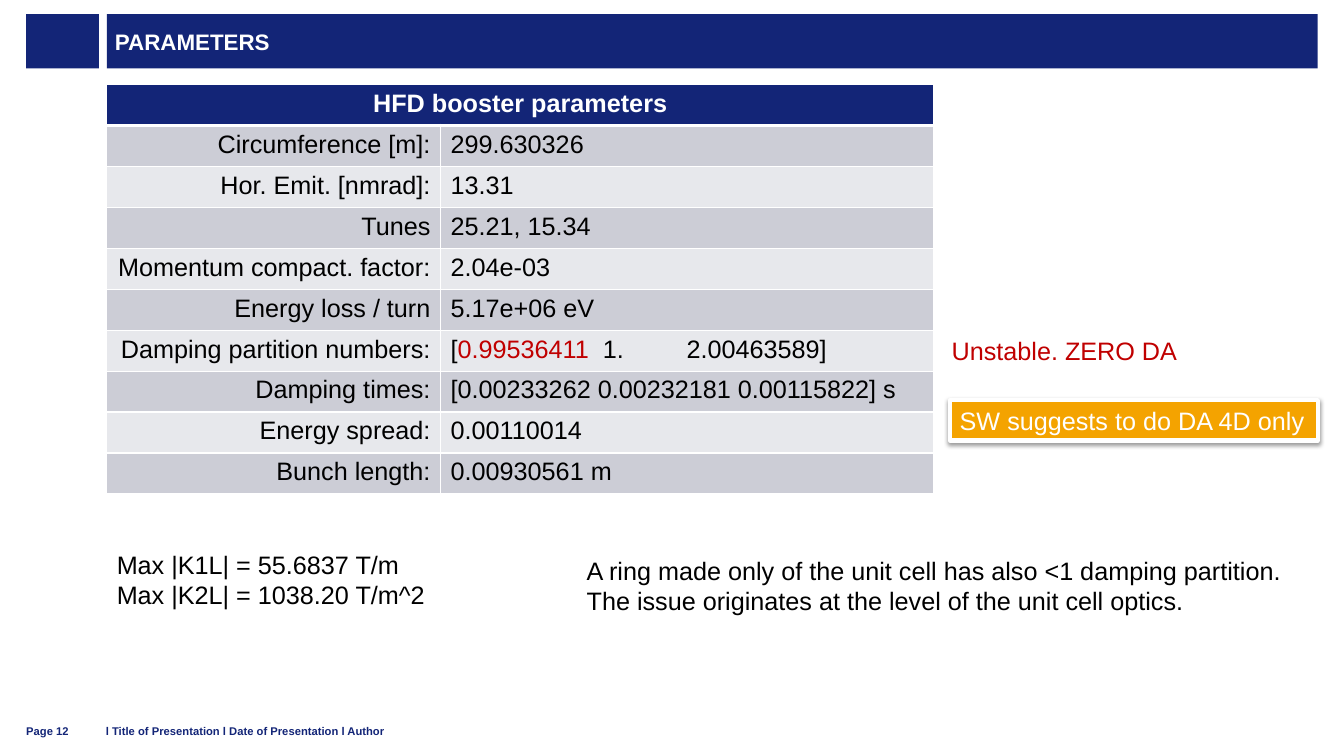
from lxml import etree
from pptx import Presentation
from pptx.dml.color import RGBColor
from pptx.enum.shapes import MSO_SHAPE
from pptx.enum.text import MSO_ANCHOR, MSO_AUTO_SIZE, PP_ALIGN
from pptx.oxml.ns import qn
from pptx.util import Inches, Pt

RECTANGLE = MSO_SHAPE.RECTANGLE
MIDDLE, BOTTOM = MSO_ANCHOR.MIDDLE, MSO_ANCHOR.BOTTOM
LEFT, CENTER, RIGHT = PP_ALIGN.LEFT, PP_ALIGN.CENTER, PP_ALIGN.RIGHT
FIT_SHAPE = MSO_AUTO_SIZE.SHAPE_TO_FIT_TEXT

COLORS = {
    "navy": "132577", "white": "FFFFFF", "black": "000000", "red": "C00000",
    "orange": "F4A300", "odd": "CCCDD6", "even": "E7E8EC",
}

# Content
TITLE = "PARAMETERS"
TABLE_TITLE = "HFD booster parameters"
PARAMETERS = [
    ("Circumference [m]:", "299.630326"),
    ("Hor. Emit. [nmrad]:", "13.31"),
    ("Tunes", "25.21, 15.34"),
    ("Momentum compact. factor:", "2.04e-03"),
    ("Energy loss / turn", "5.17e+06 eV"),
    ("Damping partition numbers:",
     [("[", "black"), ("0.99536411", "red"), ("\t1.\t2.00463589]", "black")]),
    ("Damping times:", "[0.00233262 0.00232181 0.00115822] s"),
    ("Energy spread:", "0.00110014"),
    ("Bunch length:", "0.00930561 m"),
]
DAMPING_TABS = (1.51, 2.34)
# Lines, colour, box (left, top, width, height)
NOTES = [
    (["Max |K1L| = 55.6837 T/m", "Max |K2L| = 1038.20 T/m^2"],
     "black", (1.06, 5.4, 3.29, 0.71)),
    (["Unstable. ZERO DA"], "red", (9.34, 3.28, 2.53, 0.4)),
    (["A ring made only of the unit cell has also <1 damping partition.",
      "The issue originates at the level of the unit cell optics."],
     "black", (5.72, 5.46, 7.15, 0.71)),
]
CALLOUT = (["SW suggests to do DA 4D only"], "white", (9.42, 3.97, 3.65, 0.4))
FOOTER = [
    ("Page 12", (0.26, 7.09, 0.6, 0.23)),
    ("l Title of Presentation l Date of Presentation l Author",
     (1.05, 7.09, 8.92, 0.23)),
]

# Layout
SLIDE_SIZE = (13.33, 7.5)
MARGIN, CONTENT_LEFT, CONTENT_RIGHT = 0.26, 1.06, 13.07
BAR_TOP, BAR_HEIGHT = 0.14, 0.54
TABLE_TOP, ROW_HEIGHT = 0.84, 0.406
COLUMN_WIDTHS = (3.31, 4.89)


def color(name):
    return RGBColor.from_string(COLORS[name])


def inches(box):
    return [Inches(length) for length in box]


def set_format(target, **values):
    for name, value in values.items():
        setattr(target, name, value)


def write(paragraph, runs, size=18, bold=False, align=LEFT):
    paragraph.alignment = align
    for text, color_name in runs:
        run = paragraph.add_run()
        run.text = text
        set_format(run.font, name="Arial", size=Pt(size), bold=bold)
        run.font.color.rgb = color(color_name)


def write_lines(shape, lines, color_name, **style):
    frame = shape.text_frame
    for index, line in enumerate(lines):
        paragraph = frame.add_paragraph() if index else frame.paragraphs[0]
        write(paragraph, [(line, color_name)], **style)


def add_rectangle(slide, box, fill):
    shape = slide.shapes.add_shape(RECTANGLE, *inches(box))
    shape.shadow.inherit = False
    shape.fill.solid()
    shape.fill.fore_color.rgb = color(fill)
    shape.line.fill.background()
    return shape


def add_element(parent, tag, **attributes):
    element = etree.SubElement(parent, qn(tag))
    for name, value in attributes.items():
        element.set(name, str(value))
    return element


def style_cell(cell, fill, bottom_width):
    properties = cell._tc.get_or_add_tcPr()
    for side in "LRTB":
        width = bottom_width if side == "B" else 1
        border = add_element(properties, f"a:ln{side}", w=Pt(width))
        solid = add_element(border, "a:solidFill")
        add_element(solid, "a:srgbClr", val=COLORS["white"])
    cell.fill.solid()
    cell.fill.fore_color.rgb = color(fill)


def add_parameter_table(slide):
    row_count = len(PARAMETERS) + 1
    box = (CONTENT_LEFT, TABLE_TOP, sum(COLUMN_WIDTHS), ROW_HEIGHT * row_count)
    table = slide.shapes.add_table(row_count, 2, *inches(box)).table
    for column, width in zip(table.columns, COLUMN_WIDTHS):
        column.width = Inches(width)
    for index, row in enumerate(table.rows):
        row.height = Inches(ROW_HEIGHT)
        fill = ("odd" if index % 2 else "even") if index else "navy"
        for cell in row.cells:
            style_cell(cell, fill, 1 if index else 3)

    header = table.cell(0, 0)
    header.merge(table.cell(0, 1))
    write(header.text_frame.paragraphs[0], [(TABLE_TITLE, "white")],
          bold=True, align=CENTER)
    for index, (label, value) in enumerate(PARAMETERS, start=1):
        label_paragraph, value_paragraph = (
            table.cell(index, column).text_frame.paragraphs[0]
            for column in (0, 1))
        write(label_paragraph, [(label, "black")], align=RIGHT)
        if isinstance(value, str):
            value = [(value, "black")]
        else:
            tabs = add_element(value_paragraph._p.get_or_add_pPr(), "a:tabLst")
            for position in DAMPING_TABS:
                add_element(tabs, "a:tab", pos=Inches(position), algn="l")
        write(value_paragraph, value)


def add_callout(slide):
    lines, color_name, box = CALLOUT
    callout = add_rectangle(slide, box, "orange")
    callout.line.color.rgb = color("white")
    callout.line.width = Pt(3)
    effects = callout._element.spPr.find(qn("a:effectLst"))
    shadow = add_element(effects, "a:outerShdw", blurRad=Pt(3.1), dist=Pt(1.6),
                         dir=90 * 60000, rotWithShape=0)
    shade = add_element(shadow, "a:srgbClr", val=COLORS["black"])
    add_element(shade, "a:alpha", val=38000)
    set_format(callout.text_frame, word_wrap=False, auto_size=FIT_SHAPE)
    write_lines(callout, lines, color_name)


def main():
    presentation = Presentation()
    width, height = inches(SLIDE_SIZE)
    set_format(presentation, slide_width=width, slide_height=height)
    slide = presentation.slides.add_slide(presentation.slide_layouts[6])

    # Title bar
    add_rectangle(slide, (MARGIN, BAR_TOP, 0.72, BAR_HEIGHT), "navy")
    title = add_rectangle(slide, (CONTENT_LEFT, BAR_TOP,
                                  CONTENT_RIGHT - CONTENT_LEFT, BAR_HEIGHT), "navy")
    set_format(title.text_frame, vertical_anchor=MIDDLE, word_wrap=True,
               margin_left=Inches(0.08), margin_right=Inches(0.08),
               margin_top=0, margin_bottom=0)
    write_lines(title, [TITLE], "white", size=16, bold=True)

    add_parameter_table(slide)

    # Footer
    for text, box in FOOTER:
        footer = slide.shapes.add_textbox(*inches(box))
        set_format(footer.text_frame, vertical_anchor=BOTTOM, word_wrap=True,
                   margin_left=0, margin_right=0, margin_top=0, margin_bottom=0)
        write_lines(footer, [text], "navy", size=8, bold=True)

    # Notes
    for lines, color_name, box in NOTES:
        note = slide.shapes.add_textbox(*inches(box))
        set_format(note.text_frame, word_wrap=False, auto_size=FIT_SHAPE)
        write_lines(note, lines, color_name)
    add_callout(slide)

    presentation.save("out.pptx")


if __name__ == "__main__":
    main()
